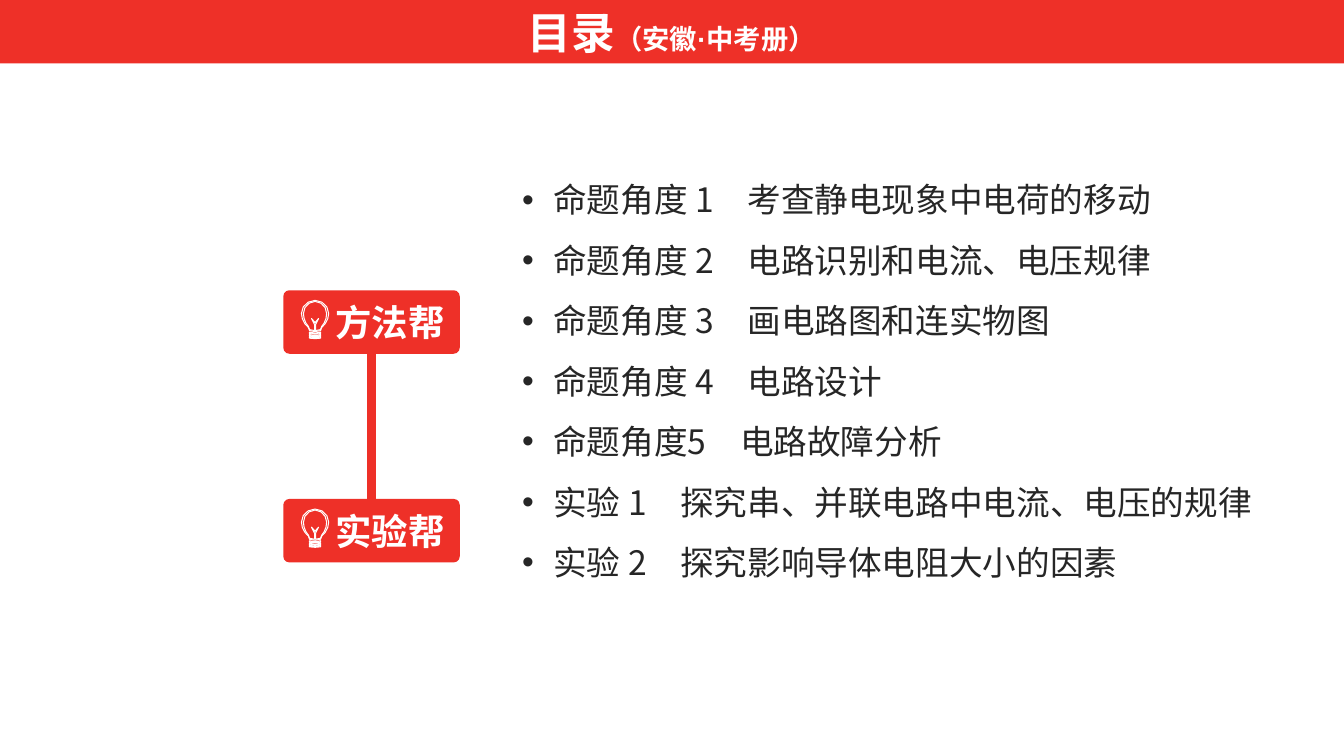
from dataclasses import dataclass

from lxml import etree
from pptx import Presentation
from pptx import util as u
from pptx.dml.color import RGBColor
from pptx.enum import shapes, text
from pptx.oxml.ns import qn


@dataclass(frozen=True)
class Theme:
    red: RGBColor = RGBColor(0xEE, 0x30, 0x28)
    white: RGBColor = RGBColor(0xFF, 0xFF, 0xFF)
    ink: RGBColor = RGBColor(0x26, 0x26, 0x26)
    latin: str = "Arial"
    chinese: str = "Noto Sans CJK SC"
    title: float = 31.2
    subtitle: float = 19.5
    badge: float = 26
    topic: float = 24
    topic_pitch: float = 43.2


THEME = Theme()
WIDTH, HEIGHT = 13.33, 7.5
BADGE_LEFT, BADGE_WIDTH, BAR_HEIGHT = 2.81, 1.75, 0.63
BADGES = (("方法帮", 2.88), ("实验帮", 4.95))
TOPICS = (
    "命题角度 1　考查静电现象中电荷的移动",
    "命题角度 2　电路识别和电流、电压规律",
    "命题角度 3　画电路图和连实物图",
    "命题角度 4　电路设计",
    "命题角度5　电路故障分析",
    "实验 1　探究串、并联电路中电流、电压的规律",
    "实验 2　探究影响导体电阻大小的因素",
)

# Right halves of the bulb's contours, in hundredths of an inch:
# pairs are corners, sextuples are cubic curves.
BULB_AXIS = 13.5
GLASS = ((13.5, 0), (21, 0, 27, 6, 27, 13), (27, 18, 24, 24, 20, 27),
         (19, 30), (13.5, 31))
FILAMENT = ((13.5, 22), (17, 18), (14, 24), (14, 30), (19, 29), (20, 26),
            (23, 23, 25, 18, 25, 13), (25, 7, 20, 1, 13.5, 1))


def base_ring(top):
    return (13.5, top + 1), (19, top), (19, top + 1.5), (13.5, top + 2)


def flatten(half, steps=3):
    """Turn half a contour into points and close it with its mirror image."""
    points = []
    for part in half:
        if len(part) == 2:
            points.append(part)
            continue
        xs = (points[-1][0], *part[::2])
        ys = (points[-1][1], *part[1::2])
        for step in range(1, steps + 1):
            t = step / steps
            s = 1 - t
            weights = (s ** 3, 3 * s * s * t, 3 * s * t * t, t ** 3)
            points.append(tuple(sum(w * v for w, v in zip(weights, values))
                                for values in (xs, ys)))
    mirrored = [(2 * BULB_AXIS - x, y) for x, y in points[-2:0:-1]]
    return [(x * 10, y * 10) for x, y in points + mirrored]


def set_values(target, **values):
    for name, value in values.items():
        setattr(target, name, value)


def paint(shape, color):
    shape.shadow.inherit = False
    shape.fill.solid()
    shape.fill.fore_color.rgb = color
    shape.line.fill.background()


def add_run(paragraph, words, size, color, latin=THEME.latin, bold=True):
    run = paragraph.add_run()
    run.text = words
    set_values(run.font, size=u.Pt(size), bold=bold, name=latin)
    run.font.color.rgb = color
    east_asian = etree.Element(qn("a:ea"), typeface=THEME.chinese)
    run.font._element.find(qn("a:latin")).addnext(east_asian)


def add_title_bar(slide):
    bar = slide.shapes.add_shape(shapes.MSO_SHAPE.RECTANGLE, 0, 0,
                                 u.Inches(WIDTH), u.Inches(BAR_HEIGHT))
    paint(bar, THEME.red)
    bar.text_frame.vertical_anchor = text.MSO_ANCHOR.MIDDLE
    paragraph = bar.text_frame.paragraphs[0]
    paragraph.alignment = text.PP_ALIGN.CENTER
    add_run(paragraph, "目录", THEME.title, THEME.white)
    add_run(paragraph, "（安徽·中考册）", THEME.subtitle, THEME.white)


def add_bulb(slide, left, top):
    contours = [flatten(half) for half in
                (GLASS, FILAMENT, *map(base_ring, (31.5, 34, 36)))]
    builder = slide.shapes.build_freeform(*contours[0][0],
                                          scale=u.Inches(1) / 1000)
    for index, points in enumerate(contours):
        if index:
            builder.move_to(*points[0])
        builder.add_line_segments(points[1:], close=True)
    bulb = builder.convert_to_shape(u.Inches(left), u.Inches(top))
    paint(bulb, THEME.red)
    bulb.line.color.rgb = THEME.white
    bulb.line.width = u.Pt(0.75)


def add_badge(slide, words, top):
    badge = slide.shapes.add_shape(
        shapes.MSO_SHAPE.ROUNDED_RECTANGLE,
        *map(u.Inches, (BADGE_LEFT, top, BADGE_WIDTH, BAR_HEIGHT)))
    badge.adjustments[0] = 0.095
    paint(badge, THEME.red)
    set_values(badge.text_frame, margin_right=u.Inches(0.13),
               vertical_anchor=text.MSO_ANCHOR.MIDDLE)
    paragraph = badge.text_frame.paragraphs[0]
    paragraph.alignment = text.PP_ALIGN.RIGHT
    add_run(paragraph, words, THEME.badge, THEME.white)
    add_bulb(slide, BADGE_LEFT + 0.18, top + 0.1)
    return badge


def link(slide, upper, lower):
    connector = slide.shapes.add_connector(
        shapes.MSO_CONNECTOR.STRAIGHT, 0, 0, 0, 0)
    connector.begin_connect(upper, 2)
    connector.end_connect(lower, 0)
    connector.line.color.rgb = THEME.red
    connector.line.width = u.Pt(6)
    etree.SubElement(connector._element.spPr, qn("a:effectLst"))


def add_topics(slide):
    box = slide.shapes.add_textbox(
        *map(u.Inches, (5.08, 1.53, 7.84, 4.34)))
    frame = box.text_frame
    frame.word_wrap = True
    for index, topic in enumerate(TOPICS):
        paragraph = frame.add_paragraph() if index else frame.paragraphs[0]
        paragraph.line_spacing = u.Pt(THEME.topic_pitch)
        properties = paragraph._p.get_or_add_pPr()
        properties.set("marL", str(u.Inches(0.31)))
        properties.set("indent", str(-u.Inches(0.31)))
        etree.SubElement(properties, qn("a:buFont"), typeface=THEME.latin)
        etree.SubElement(properties, qn("a:buChar"), char="•")
        add_run(paragraph, topic, THEME.topic, THEME.ink, THEME.chinese, False)


def main():
    presentation = Presentation()
    set_values(presentation, slide_width=u.Inches(WIDTH),
               slide_height=u.Inches(HEIGHT))
    slide = presentation.slides.add_slide(presentation.slide_layouts[6])
    add_title_bar(slide)
    methods, experiments = [add_badge(slide, *badge) for badge in BADGES]
    link(slide, methods, experiments)
    add_topics(slide)
    presentation.save("out.pptx")


if __name__ == "__main__":
    main()
